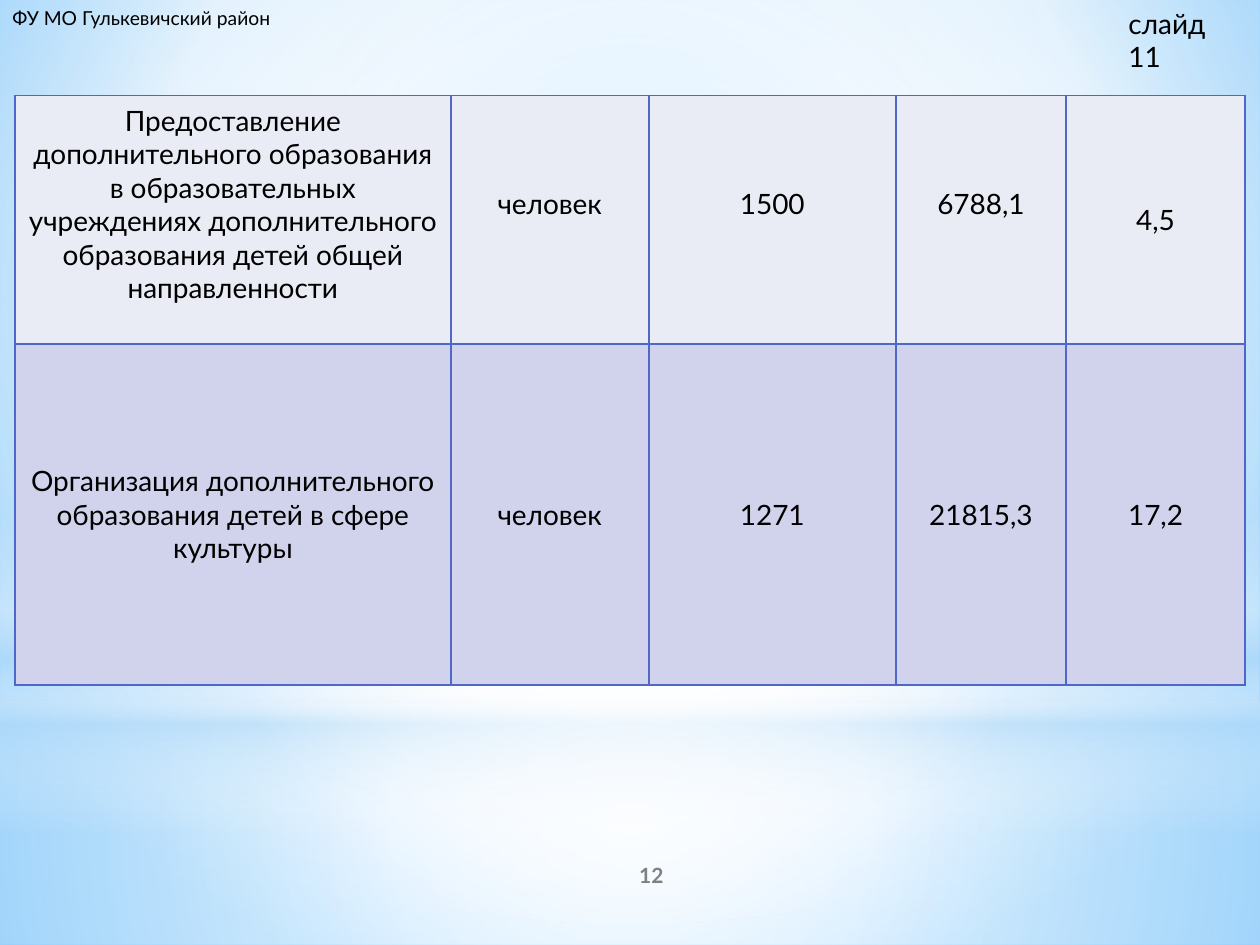
from dataclasses import dataclass

from pptx import Presentation
from pptx.dml.color import RGBColor
from pptx.enum.shapes import MSO_SHAPE
from pptx.enum.text import MSO_ANCHOR, PP_ALIGN
from pptx.oxml import parse_xml
from pptx.oxml.ns import nsdecls, qn
from pptx.util import Cm, Pt


@dataclass(frozen=True)
class Theme:
    """Colours, font and type sizes of the slide."""
    font: str = "Lato"
    ink: str = "000000"
    muted: str = "808080"
    white: str = "FFFFFF"
    sky: str = "B4DCFA"
    backdrop_inner: str = "9ED5FF"
    backdrop_outer: str = "5BB9FF"
    border: str = "4E67C8"
    bands: tuple = ("E9EBF5", "D0D3EB")
    body_size: int = 16
    number_size: int = 12
    office_size: int = 11


THEME = Theme()
CENTRE = (50, 50, 50, 50)
COLUMN_WIDTHS = (8.79, 3.99, 4.98, 3.43, 3.61)
ROW_HEIGHTS = (5, 6.88)
SERVICES = (
    ("Предоставление дополнительного образования в образовательных учреждениях "
     "дополнительного образования детей общей направленности",
     "человек", "1500", "6788,1", "4,5"),
    ("Организация дополнительного образования детей в сфере культуры",
     "человек", "1271", "21815,3", "17,2"),
)


def apply_format(target, values):
    """Set every attribute named in values on target."""
    for name, value in values.items():
        setattr(target, name, value)


def set_gradient(fill, element, stops, focus=None):
    """Give a fill (position, colour, opacity) stops, radial if focus is set, else vertical."""
    fill.gradient()
    stop_xml = "".join(
        f'<a:gs pos="{position * 1000}"><a:srgbClr val="{colour}">'
        f'<a:alpha val="{opacity * 1000}"/></a:srgbClr></a:gs>'
        for position, colour, opacity in stops)
    direction = '<a:lin ang="5400000" scaled="0"/>'
    if focus:
        edges = " ".join(f'{side}="{inset * 1000}"' for side, inset in zip("ltrb", focus))
        direction = f'<a:path path="circle"><a:fillToRect {edges}/></a:path>'
    gradient = parse_xml(f'<a:gradFill {nsdecls("a")} rotWithShape="1">'
                         f'<a:gsLst>{stop_xml}</a:gsLst>{direction}</a:gradFill>')
    plain = next(element.iter(qn("a:gradFill")))
    plain.getparent().replace(plain, gradient)


def add_glow(slide, outline, top, height, stops, focus=None):
    """Add a full-width translucent shape."""
    glow = slide.shapes.add_shape(outline, 0, Cm(top), Cm(25.4), Cm(height))
    glow.shadow.inherit = False
    glow.line.fill.background()
    set_gradient(glow.fill, glow.element, stops, focus)


def add_backdrop(slide):
    """Paint the sky background and its layers of light."""
    white, sky = THEME.white, THEME.sky
    set_gradient(slide.background.fill, slide.element,
                 ((0, THEME.backdrop_inner, 100), (60, white, 100),
                  (100, THEME.backdrop_outer, 100)), (20, 10, 20, 60))
    layers = (
        (MSO_SHAPE.RECTANGLE, 14.17, 4.88,
         ((0, white, 91), (37, white, 76), (100, sky, 79)), CENTRE),
        (MSO_SHAPE.RECTANGLE, 0, 14.17,
         ((0, white, 89), (48, white, 62), (100, sky, 79)), CENTRE),
        (MSO_SHAPE.RECTANGLE, 10.46, 6.35,
         ((0, white, 0), (29, white, 30), (45, sky, 40),
          (55, white, 26), (65, sky, 60), (100, white, 0)), None),
        (MSO_SHAPE.OVAL, 4.45, 14.17, ((0, white, 100), (56, white, 0)), CENTRE),
    )
    for layer in layers:
        add_glow(slide, *layer)


def write_text(frame, text, size, colour=THEME.ink, bold=False, align=PP_ALIGN.LEFT):
    """Write one formatted paragraph into a text frame."""
    paragraph = frame.paragraphs[0]
    paragraph.alignment = align
    run = paragraph.add_run()
    run.text = text
    apply_format(run.font, {"name": THEME.font, "size": Pt(size), "bold": bold})
    run.font.color.rgb = RGBColor.from_string(colour)


def add_label(slide, box, text, size, frame_format, **text_format):
    """Add a text box at box, given in centimetres."""
    frame = slide.shapes.add_textbox(*map(Cm, box)).text_frame
    apply_format(frame, frame_format)
    write_text(frame, text, size, **text_format)


def add_borders(cell):
    """Draw a thin line on all four sides of a cell."""
    properties = cell._tc.get_or_add_tcPr()
    for position, side in enumerate("LRTB"):
        properties.insert(position, parse_xml(
            f'<a:ln{side} {nsdecls("a")} w="12700"><a:solidFill>'
            f'<a:srgbClr val="{THEME.border}"/></a:solidFill></a:ln{side}>'))


def add_services_table(slide):
    """Add the table of education services."""
    table = slide.shapes.add_table(
        len(SERVICES), len(COLUMN_WIDTHS), Cm(0.3), Cm(1.93),
        Cm(sum(COLUMN_WIDTHS)), Cm(sum(ROW_HEIGHTS))).table
    apply_format(table, {"first_row": False, "horz_banding": False})
    for column, width in zip(table.columns, COLUMN_WIDTHS):
        column.width = Cm(width)
    for row, height, service, band in zip(table.rows, ROW_HEIGHTS, SERVICES, THEME.bands):
        row.height = Cm(height)
        for cell, value in zip(row.cells, service):
            cell.vertical_anchor = MSO_ANCHOR.MIDDLE
            cell.fill.solid()
            cell.fill.fore_color.rgb = RGBColor.from_string(band)
            write_text(cell.text_frame, value, THEME.body_size, align=PP_ALIGN.CENTER)
            add_borders(cell)
    for raised in range(len(COLUMN_WIDTHS) - 1):
        table.cell(0, raised).margin_bottom = Cm(0.76)


def main():
    """Build the slide and save it."""
    presentation = Presentation()
    apply_format(presentation, {"slide_width": Cm(25.4), "slide_height": Cm(19.05)})
    slide = presentation.slides.add_slide(presentation.slide_layouts[6])
    add_backdrop(slide)
    add_label(slide, (10.59, 17.14, 5.08, 1.02), "12", THEME.number_size,
              {"word_wrap": True, "vertical_anchor": MSO_ANCHOR.MIDDLE},
              colour=THEME.muted, bold=True, align=PP_ALIGN.CENTER)
    add_services_table(slide)
    add_label(slide, (22.5, 0, 2.8, 0.94), "слайд 11", THEME.body_size,
              {"word_wrap": True})
    add_label(slide, (0, 0, 5.72, 0.74), "ФУ МО Гулькевичский район",
              THEME.office_size, {"word_wrap": False})
    presentation.save("out.pptx")


if __name__ == "__main__":
    main()
